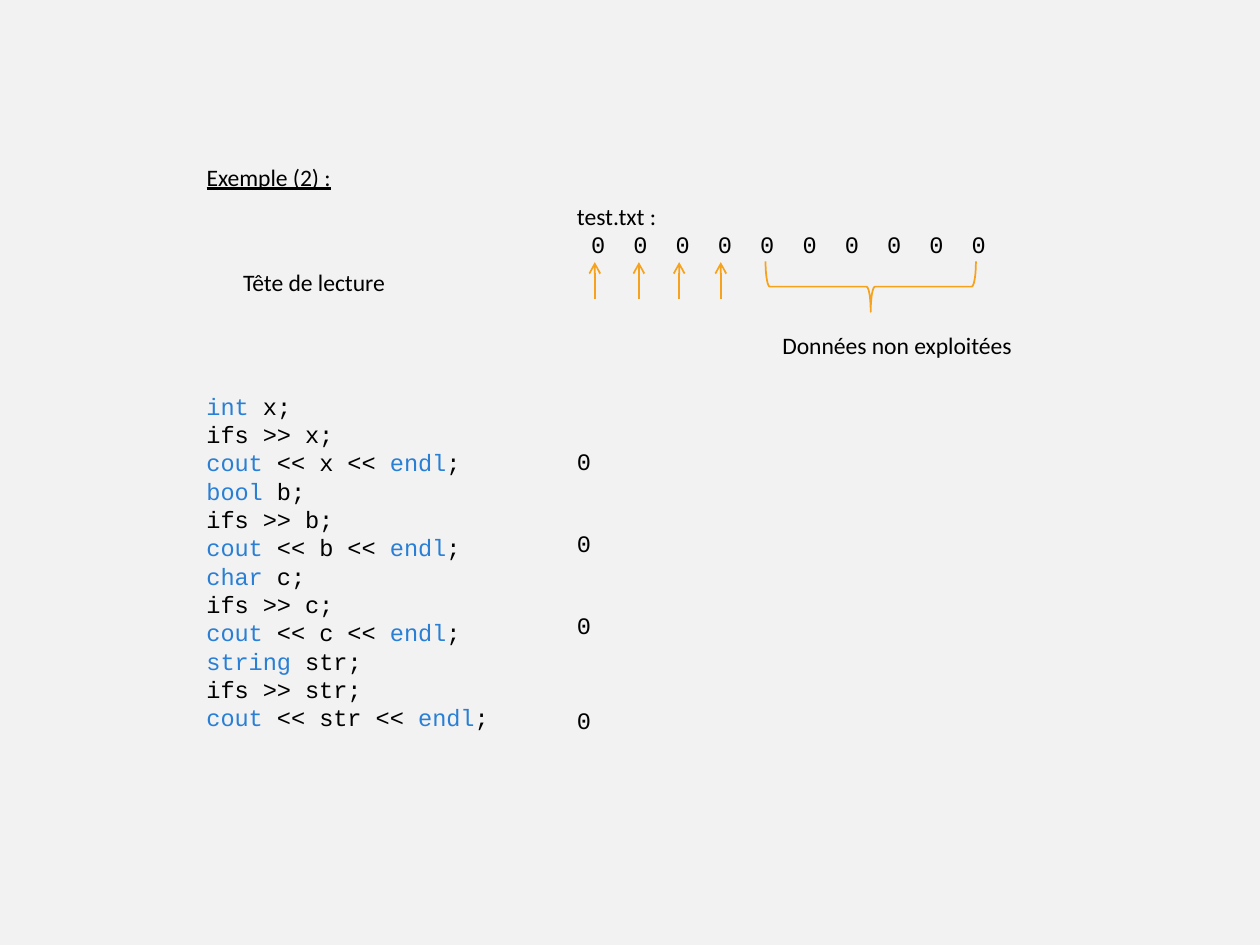
from pptx import Presentation
from pptx.dml.color import RGBColor
from pptx.enum.shapes import MSO_CONNECTOR, MSO_SHAPE
from pptx.enum.text import MSO_ANCHOR, MSO_AUTO_SIZE, PP_ALIGN
from pptx.oxml.ns import qn
from pptx.util import Pt
from lxml.etree import SubElement

BLACK = RGBColor(0x00, 0x00, 0x00)
BLUE = RGBColor(0x29, 0x7F, 0xD5)
ORANGE = RGBColor(0xF6, 0xA2, 0x1D)
PAPER = RGBColor(0xF2, 0xF2, 0xF2)
PROSE, CODE = "Calibri", "Courier New"
TEXT_SIZE = 13.5
LINE_HEIGHT = 23.8  # height of a box holding one line

VARIABLES = [("int", "x"), ("bool", "b"), ("char", "c"), ("string", "str")]


def format_span(span, font=PROSE, color=BLACK, underline=None):
    span.font.name = font
    span.font.size = Pt(TEXT_SIZE)
    span.font.color.rgb = color
    span.font.underline = underline
    span.font.bold = False


def place(shape, left, top, width, height):
    shape.left, shape.top = Pt(left), Pt(top)
    shape.width, shape.height = Pt(width), Pt(height)


def add_text(page, left, top, width, height, *lines):
    """Add a text box; each line is a (text, font) pair."""
    box = page.shapes.add_textbox(Pt(left), Pt(top), Pt(width), Pt(height))
    frame = box.text_frame
    frame.word_wrap = True
    frame.text = "\n".join(text for text, font in lines)
    for para, (text, font) in zip(frame.paragraphs, lines):
        for span in para.runs:
            format_span(span, font)
    return box


def add_heading(page, left, top, width, height):
    title = page.shapes.title
    place(title, left, top, width, height)
    frame = title.text_frame
    frame.text = "Exemple (2) :"
    frame.auto_size = MSO_AUTO_SIZE.NONE
    frame.vertical_anchor = MSO_ANCHOR.TOP
    para = frame.paragraphs[0]
    para.alignment = PP_ALIGN.LEFT
    format_span(para.runs[0], underline=True)


def add_read_arrow(page, x, bottom, top):
    arrow = page.shapes.add_connector(
        MSO_CONNECTOR.STRAIGHT, Pt(x), Pt(bottom), Pt(x), Pt(top))
    arrow.line.color.rgb = ORANGE
    arrow.line.width = Pt(1)
    properties = arrow._element.spPr
    SubElement(properties.find(qn("a:ln")), qn("a:tailEnd"), type="arrow")
    SubElement(properties, qn("a:effectLst"))


def add_unused_brace(page, left, top, width, height):
    """Add a brace pointing down that fills the given box."""
    middle_x, middle_y = left + width / 2, top + height / 2
    brace = page.shapes.add_shape(
        MSO_SHAPE.LEFT_BRACE, Pt(middle_x - height / 2),
        Pt(middle_y - width / 2), Pt(height), Pt(width))
    brace.rotation = 270
    brace.shadow.inherit = False
    brace.fill.background()
    brace.line.color.rgb = ORANGE
    brace.line.width = Pt(1)


def add_file_view(page, left, top, width):
    # File name and content
    content = " " + "  ".join(["0"] * 10)
    add_text(page, left, top, width, 40.3, ("test.txt :", PROSE), (content, CODE))
    # Reading head positions
    for offset in (17.3, 42.5, 65.5, 89.3):
        add_read_arrow(page, left + offset, top + 59, top + 38.2)
    add_text(page, left - 190.8, top + 38.2, 168.5, LINE_HEIGHT,
             ("Tête de lecture", PROSE))
    # Data left unread
    add_unused_brace(page, left + 114.9, top + 37.8, 120.2, 28.8)
    add_text(page, left + 117.4, top + 74.2, 157.7, LINE_HEIGHT,
             ("Données non exploitées", PROSE))


def add_listing(page, left, top, width, height):
    box = page.shapes.add_textbox(Pt(left), Pt(top), Pt(width), Pt(height))
    frame = box.text_frame
    frame.word_wrap = True
    lines = []
    for kind, name in VARIABLES:
        lines += [
            [(kind, BLUE), (f" {name};", BLACK)],
            [(f"ifs >> {name};", BLACK)],
            [("cout", BLUE), (f" << {name} << ", BLACK), ("endl", BLUE), (";", BLACK)],
        ]
    for index, pieces in enumerate(lines):
        para = frame.add_paragraph() if index else frame.paragraphs[0]
        for text, color in pieces:
            span = para.add_run()
            span.text = text
            format_span(span, CODE, color)


def add_outputs(page, left, tops):
    for top in tops:
        add_text(page, left, top, 34.6, LINE_HEIGHT, ("0", CODE))


def main():
    deck = Presentation()
    deck.slide_width, deck.slide_height = Pt(720), Pt(540)
    page = deck.slides.add_slide(deck.slide_layouts[5])
    page.background.fill.solid()
    page.background.fill.fore_color.rgb = PAPER

    add_heading(page, 110.9, 89.3, 486.7, LINE_HEIGHT)
    add_file_view(page, 322.6, 111.6, 296.6)
    add_listing(page, 110.9, 220.3, 270, 203.8)
    add_outputs(page, 322.6, (252, 298.8, 345.6, 399.6))
    deck.save("out.pptx")


if __name__ == "__main__":
    main()
